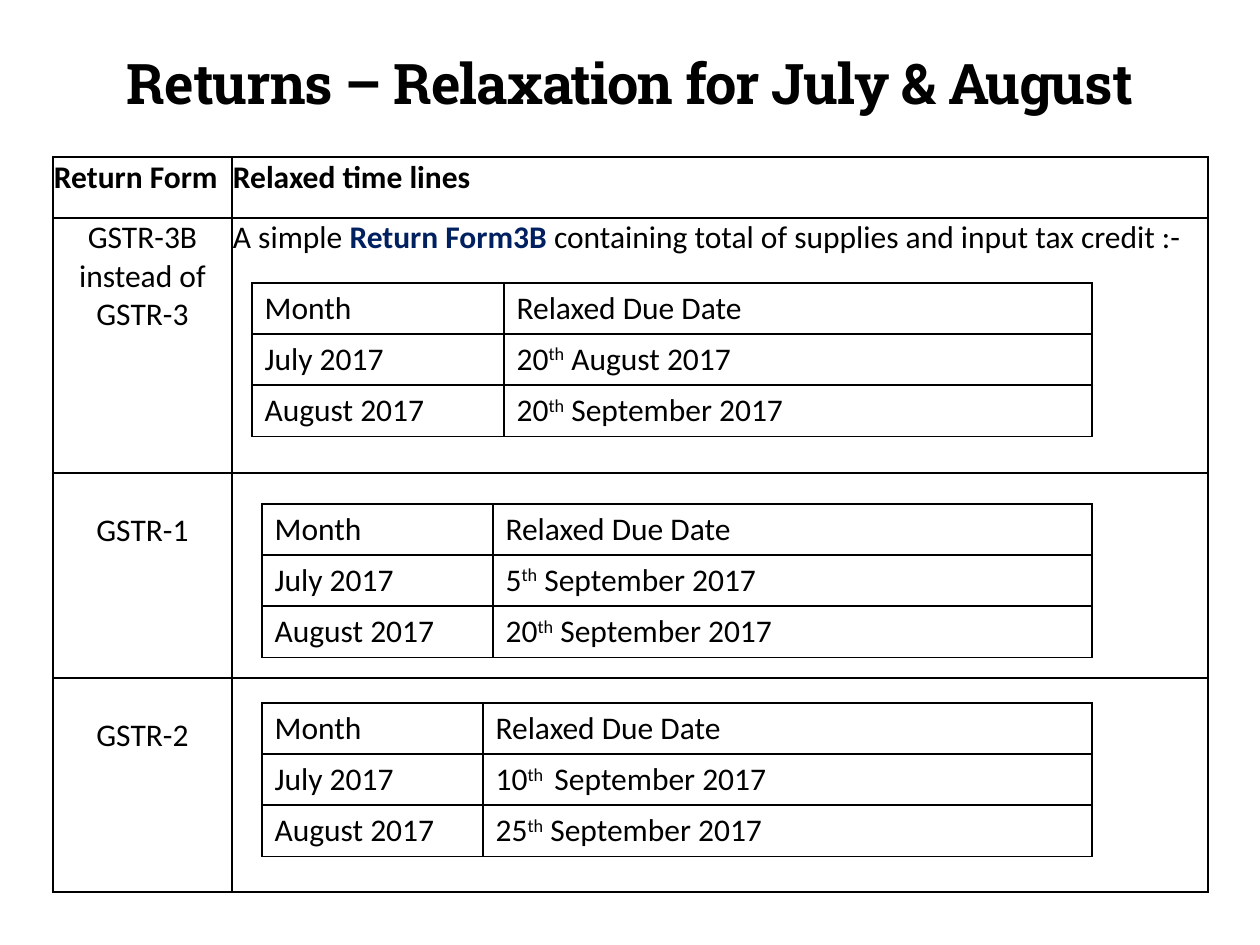
from dataclasses import dataclass

from lxml import etree
from pptx import Presentation
from pptx.dml.color import RGBColor
from pptx.enum.text import MSO_ANCHOR, PP_ALIGN
from pptx.oxml.ns import qn
from pptx.util import Emu, Pt

LEFT, CENTER, JUSTIFY = PP_ALIGN.LEFT, PP_ALIGN.CENTER, PP_ALIGN.JUSTIFY
MIDDLE = MSO_ANCHOR.MIDDLE
PLAIN, ACCENT, RAISED = "plain", "accent", "raised"
TITLE_ONLY = 5


@dataclass(frozen=True)
class Theme:
    ink: str = "000000"
    accent: str = "002060"
    title_font: str = "Roboto Slab"
    body_font: str = "Calibri"
    title_size: int = 32
    body_size: int = 18
    title_tracking: int = -60
    raise_by: int = 30000
    border: int = 1


def px(length):
    return Emu(round(length * 914400 / 126))


class SlideBuilder:
    def __init__(self, theme, slide):
        self.theme = theme
        self.slide = slide

    def format_paragraph(self, para, font, size, bold, align):
        para.alignment = align
        para.font.name = font
        para.font.size = Pt(size)
        para.font.bold = bold
        para.font.color.rgb = RGBColor.from_string(self.theme.ink)

    def title(self, text, left, top, width, height):
        box = self.slide.shapes.title
        box.left, box.top = px(left), px(top)
        box.width, box.height = px(width), px(height)
        frame = box.text_frame
        frame.vertical_anchor = MIDDLE
        para = frame.paragraphs[0]
        self.format_paragraph(para, self.theme.title_font, self.theme.title_size, True, CENTER)
        span = para.add_run()
        span.text = text
        span._r.get_or_add_rPr().set("spc", str(self.theme.title_tracking))

    def table(self, left, top, widths, heights):
        frame = self.slide.shapes.add_table(
            len(heights), len(widths), px(left), px(top), px(sum(widths)), px(sum(heights))
        )
        table = frame.table
        table.first_row = False
        table.horz_banding = False
        for column, width in zip(table.columns, widths):
            column.width = px(width)
        for row, height in zip(table.rows, heights):
            row.height = px(height)
        for cell in table.iter_cells():
            cell.fill.background()
            self.borders(cell)
        return table

    def borders(self, cell):
        properties = cell._tc.get_or_add_tcPr()
        for index, side in enumerate(("lnL", "lnR", "lnT", "lnB")):
            line = etree.Element(qn(f"a:{side}"), w=str(Pt(self.theme.border)))
            fill = etree.SubElement(line, qn("a:solidFill"))
            etree.SubElement(fill, qn("a:srgbClr"), val=self.theme.ink)
            properties.insert(index, line)

    def cell_text(self, cell, spans, align=LEFT, bold=False):
        para = cell.text_frame.paragraphs[0]
        self.format_paragraph(para, self.theme.body_font, self.theme.body_size, bold, align)
        for text, style in spans:
            span = para.add_run()
            span.text = text
            if style == ACCENT:
                span.font.bold = True
                span.font.color.rgb = RGBColor.from_string(self.theme.accent)
            elif style == RAISED:
                span._r.get_or_add_rPr().set("baseline", str(self.theme.raise_by))

    def forms_table(self, left, top, widths, heights, rows):
        table = self.table(left, top, widths, heights)
        for row_index, (inset, bold, aligns, texts) in enumerate(rows):
            for column_index, (align, spans) in enumerate(zip(aligns, texts)):
                cell = table.cell(row_index, column_index)
                cell.margin_left = cell.margin_right = px(1)
                cell.margin_top, cell.margin_bottom = px(inset), px(0)
                self.cell_text(cell, spans, align, bold)

    def due_dates(self, left, top, widths, july, august):
        table = self.table(left, top, widths, [51] * 3)
        rows = [
            ("Month", [("Relaxed Due Date", PLAIN)]),
            ("July 2017", july),
            ("August 2017", august),
        ]
        for row_index, (month, due) in enumerate(rows):
            self.cell_text(table.cell(row_index, 0), [(month, PLAIN)])
            self.cell_text(table.cell(row_index, 1), due)


def due(day, month, suffix="th"):
    return [(day, PLAIN), (suffix, RAISED), (f" {month} 2017", PLAIN)]


def main():
    deck = Presentation()
    deck.slide_width, deck.slide_height = px(1260), px(945)
    page = SlideBuilder(Theme(), deck.slides.add_slide(deck.slide_layouts[TITLE_ONLY]))

    page.title("Returns – Relaxation for July & August", 64, 38, 1132, 88)

    body_aligns = (CENTER, JUSTIFY)
    summary = [
        ("A simple ", PLAIN),
        ("Return Form3B ", ACCENT),
        ("containing total of supplies and input tax credit :-", PLAIN),
    ]
    page.forms_table(
        53, 157, [179, 976], [61, 255, 205, 214],
        [
            (1, True, (JUSTIFY, JUSTIFY),
             ([("Return Form", PLAIN)], [("Relaxed time lines", PLAIN)])),
            (1, False, body_aligns, ([("GSTR-3B instead of GSTR-3", PLAIN)], summary)),
            (39, False, body_aligns, ([("GSTR-1", PLAIN)], [])),
            (39, False, body_aligns, ([("GSTR-2", PLAIN)], [])),
        ],
    )

    page.due_dates(262, 504, [231, 599], due("5", "September"), due("20", "September"))
    page.due_dates(262, 703, [221, 609], due("10", "September", "th "), due("25", "September"))
    page.due_dates(252, 283, [252, 588], due("20", "August"), due("20", "September"))

    deck.save("out.pptx")


if __name__ == "__main__":
    main()
